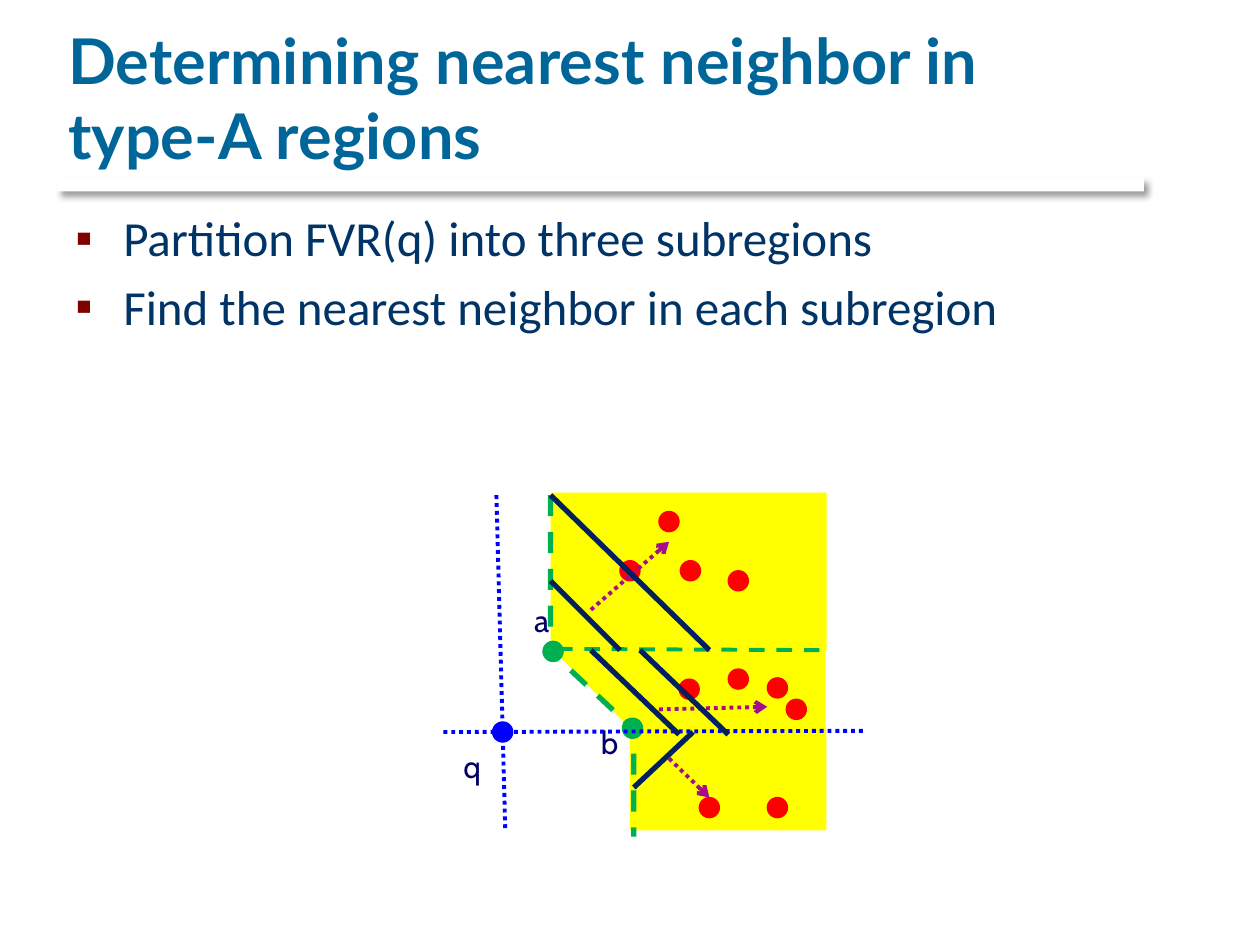
from lxml.etree import SubElement
from pptx import Presentation
from pptx.dml.color import RGBColor
from pptx.enum.dml import MSO_LINE
from pptx.enum.shapes import MSO_CONNECTOR, MSO_SHAPE
from pptx.enum.text import MSO_ANCHOR, PP_ALIGN
from pptx.oxml.ns import qn
from pptx.util import Inches, Pt

# Content
TITLE = "Determining nearest neighbor in type-A regions"
BULLETS = ["Partition FVR(q) into three subregions",
           "Find the nearest neighbor in each subregion"]
YELLOW, GREEN, BLUE, RED = "FFFF00", "00B050", "0000FF", "FF0000"
NAVY, PURPLE, TEAL, WHITE = "002060", "A30D8E", "006699", "FFFFFF"

# Diagram: rectangles are left, top, width, height; the rest are points
TOP_REGION = (4.37, 3.91, 2.19, 1.25)
BOTTOM_REGION = (5, 5.78, 1.56, 0.81)
MIDDLE_REGION = [(4.37, 5.14), (6.55, 5.16), (6.55, 5.84), (5.03, 5.81)]
REGION_BORDER = [(4.37, 3.93), (4.37, 5.17), (5.03, 5.79), (5.03, 6.64)]
DOT_SIZE = 0.16
DOTS = {  # top left corners by colour
    BLUE: [(3.91, 5.73)],
    GREEN: [(4.31, 5.09), (4.94, 5.7)],
    RED: [(5.23, 4.06), (4.92, 4.45), (5.78, 4.53), (5.4, 4.45),
          (5.39, 5.39), (5.78, 5.31), (6.09, 5.38), (6.24, 5.55),
          (6.09, 6.33), (5.55, 6.33)],
}
AXES = [((3.94, 3.93), (4.01, 6.58)), ((3.52, 5.81), (6.86, 5.8))]
DIVIDERS = [((4.42, 5.15), (6.55, 5.16))]
SWEEP_LINES = [((4.37, 4.61), (4.92, 5.16)), ((4.37, 3.93), (5.63, 5.16)),
               ((4.69, 5.16), (5.39, 5.83)), ((5.08, 5.16), (5.78, 5.83)),
               ((5.5, 5.81), (5.03, 6.25))]
SWEEP_ARROWS = [((4.69, 4.84), (5.31, 4.3)), ((5.23, 5.63), (6.09, 5.61)),
                ((5.31, 6.02), (5.63, 6.33))]
LABELS = [("q", 3.58, 5.88, 0.33), ("a", 4.14, 4.72, 0.31), ("b", 4.67, 5.69, 0.33)]


def rgb(value):
    return RGBColor.from_string(value)


def write(para, text, font, size, color, bold=False, spacing=None):
    span = para.add_run()
    span.text = text
    span.font.name, span.font.size, span.font.bold = font, Pt(size), bold
    span.font.color.rgb = rgb(color)
    if spacing:
        span.font._element.set("spc", str(spacing))


def add_bullet(para, indent, color):
    properties = para._p.get_or_add_pPr()
    properties.set("marL", str(Inches(indent)))
    properties.set("indent", str(-Inches(indent)))
    SubElement(SubElement(properties, qn("a:buClr")), qn("a:srgbClr"), val=color)
    SubElement(properties, qn("a:buFont"), typeface="Arial")
    SubElement(properties, qn("a:buChar"), char="▪")


def style_line(line, color, width, dash=None):
    line.color.rgb = rgb(color)
    line.width = Pt(width)
    if dash:
        line.dash_style = dash


def add_block(page, kind, place, fill, outline=None):
    block = page.shapes.add_shape(kind, *map(Inches, place))
    block.shadow.inherit = False
    block.fill.solid()
    block.fill.fore_color.rgb = rgb(fill)
    if outline:
        style_line(block.line, outline, 0.75)
    else:
        block.line.fill.background()
    return block


def add_outline(page, points, close):
    builder = page.shapes.build_freeform(*map(Inches, points[0]), scale=1.0)
    builder.add_line_segments(
        [tuple(map(Inches, point)) for point in points[1:]], close=close)
    outline = builder.convert_to_shape()
    outline.shadow.inherit = False
    return outline


def add_lines(page, ends, color, width, dash=None, arrow=False):
    for start, end in ends:
        line = page.shapes.add_connector(
            MSO_CONNECTOR.STRAIGHT, *map(Inches, start + end))
        style_line(line.line, color, width, dash)
        if arrow:
            SubElement(line.line._get_or_add_ln(), qn("a:tailEnd"), type="arrow")
        SubElement(line._element.spPr, qn("a:effectLst"))


deck = Presentation()
deck.slide_width, deck.slide_height = Inches(10), Inches(7.5)
page = deck.slides.add_slide(deck.slide_layouts[5])

# Title
title = page.shapes.title
title.left, title.top, title.width, title.height = map(Inches, (0.44, 0.17, 8.5, 1.25))
title.text_frame.vertical_anchor = MSO_ANCHOR.BOTTOM
title.text_frame.paragraphs[0].alignment = PP_ALIGN.LEFT
write(title.text_frame.paragraphs[0], TITLE, "Lato", 36, TEAL, bold=True, spacing=10)

# Soft rule under the title: a white bar that casts a shadow
bar = add_block(page, MSO_SHAPE.RECTANGLE, (0.45, 1.41, 8.63, 0.11), WHITE)
shadow = SubElement(bar._element.spPr.find(qn("a:effectLst")), qn("a:outerShdw"),
                    blurRad=str(Pt(4)), dist=str(Pt(3)), dir=str(45 * 60000),
                    algn="tl", rotWithShape="0")
shadow_color = SubElement(shadow, qn("a:srgbClr"), val="000000")
SubElement(shadow_color, qn("a:alpha"), val="40000")

# Bullets
body = page.shapes.add_textbox(*map(Inches, (0.5, 1.6, 8.95, 1.68))).text_frame
body.word_wrap = True
for index, text in enumerate(BULLETS):
    para = body.add_paragraph() if index else body.paragraphs[0]
    para.space_before = Pt(5.6)
    add_bullet(para, 0.38, "800000")
    write(para, text, "Calibri", 28, "003366")

# Regions and their border
middle = add_outline(page, MIDDLE_REGION, close=True)
middle.fill.solid()
middle.fill.fore_color.rgb = rgb(YELLOW)
middle.line.fill.background()
for region in (TOP_REGION, BOTTOM_REGION):
    add_block(page, MSO_SHAPE.RECTANGLE, region, YELLOW)
border = add_outline(page, REGION_BORDER, close=False)
border.fill.background()
style_line(border.line, GREEN, 3, MSO_LINE.DASH)

# Points
for color, corners in DOTS.items():
    for left, top in corners:
        add_block(page, MSO_SHAPE.OVAL, (left, top, DOT_SIZE, DOT_SIZE), color, color)

# Lines and arrows
add_lines(page, AXES, BLUE, 2.25, MSO_LINE.ROUND_DOT)
add_lines(page, DIVIDERS, GREEN, 2.25, MSO_LINE.DASH)
add_lines(page, SWEEP_ARROWS, PURPLE, 2.25, MSO_LINE.ROUND_DOT, arrow=True)
add_lines(page, SWEEP_LINES, NAVY, 3)

# Labels
for text, left, top, width in LABELS:
    box = page.shapes.add_textbox(*map(Inches, (left, top, width, 0.4)))
    box.text_frame.word_wrap = False
    write(box.text_frame.paragraphs[0], text, "Cabin", 18, "000066")

deck.save("out.pptx")
